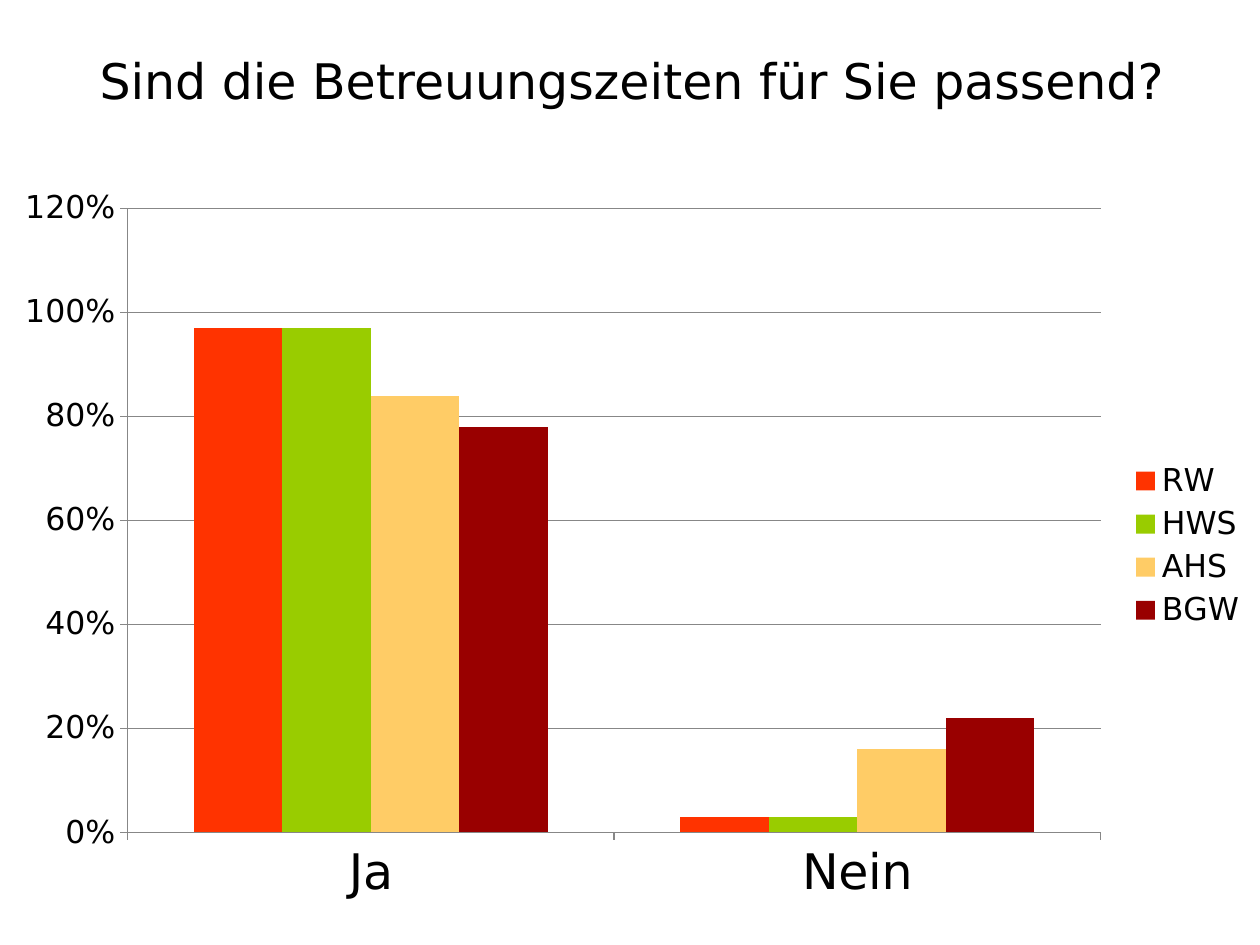
from pptx import Presentation
from pptx.chart.data import CategoryChartData
from pptx.dml.color import RGBColor
from pptx.enum.chart import XL_CHART_TYPE as ChartType, XL_LEGEND_POSITION as LegendPosition
from pptx.enum.chart import XL_TICK_MARK as TickMark
from pptx.enum.text import MSO_ANCHOR as Anchor, PP_ALIGN as Align
from pptx.util import Cm, Pt

ANSWERS = ["Ja", "Nein"]
SCHOOLS = {
    "RW": ([0.97, 0.03], "FF3300"),
    "HWS": ([0.97, 0.03], "99CC00"),
    "AHS": ([0.84, 0.16], "FFCC66"),
    "BGW": ([0.78, 0.22], "990000"),
}


def color(hex_value):
    return RGBColor.from_string(hex_value)


def apply_format(target, values):
    for name, value in values.items():
        setattr(target, name, value)


class SurveySlide:
    font_name = "DejaVu Sans"
    text_color = "000000"
    line_color = "878787"
    large, small = 28, 18

    def __init__(self, presentation):
        self.slide = presentation.slides.add_slide(presentation.slide_layouts[6])

    def style_font(self, font, size):
        apply_format(font, {"name": self.font_name, "size": Pt(size), "bold": False})
        font.color.rgb = color(self.text_color)

    def style_line(self, line):
        line.color.rgb = color(self.line_color)
        line.width = Pt(0.75)

    def add_question(self, wording, left, top, width, height):
        question = self.slide.shapes.add_textbox(Cm(left), Cm(top), Cm(width), Cm(height))
        frame = question.text_frame
        apply_format(frame, {"word_wrap": True, "vertical_anchor": Anchor.MIDDLE})
        paragraph = frame.paragraphs[0]
        paragraph.alignment = Align.CENTER
        run = paragraph.add_run()
        run.text = wording
        self.style_font(run.font, self.large)

    def style_axis(self, axis, size, values):
        apply_format(axis, {"major_tick_mark": TickMark.OUTSIDE,
                            "minor_tick_mark": TickMark.NONE, **values})
        self.style_font(axis.tick_labels.font, size)
        self.style_line(axis.format.line)

    def add_columns(self, categories, groups, left, top, width, height):
        """Add a clustered column chart of shares, one series per group."""
        data = CategoryChartData(number_format="0%")
        data.categories = categories
        for name, (shares, _) in groups.items():
            data.add_series(name, shares)
        chart = self.slide.shapes.add_chart(
            ChartType.COLUMN_CLUSTERED, Cm(left), Cm(top), Cm(width), Cm(height), data
        ).chart
        apply_format(chart, {"has_title": False, "has_legend": True})
        self.style_font(chart.font, self.small)

        apply_format(chart.legend, {"position": LegendPosition.RIGHT,
                                    "include_in_layout": False})
        self.style_font(chart.legend.font, self.small)

        self.style_axis(chart.category_axis, self.large, {"has_major_gridlines": False})
        share_axis = chart.value_axis
        self.style_axis(share_axis, self.small, {
            "has_major_gridlines": True, "minimum_scale": 0,
            "maximum_scale": 1.2, "major_unit": 0.2,
        })
        self.style_line(share_axis.major_gridlines.format.line)
        apply_format(share_axis.tick_labels, {"number_format": "0%",
                                              "number_format_is_linked": False})

        plot = chart.plots[0]
        apply_format(plot, {"gap_width": 150, "overlap": 0, "vary_by_categories": False})
        for series, (_, fill_color) in zip(plot.series, groups.values()):
            series.format.fill.solid()
            series.format.fill.fore_color.rgb = color(fill_color)


def main():
    presentation = Presentation()
    apply_format(presentation, {"slide_width": Cm(25.4), "slide_height": Cm(19.05)})
    survey = SurveySlide(presentation)
    survey.add_question("Sind die Betreuungszeiten für Sie passend?", 1.3, 0.33, 22.86, 2.57)
    survey.add_columns(ANSWERS, SCHOOLS, 0, 3.53, 25.4, 14.94)
    presentation.save("out.pptx")


if __name__ == "__main__":
    main()
